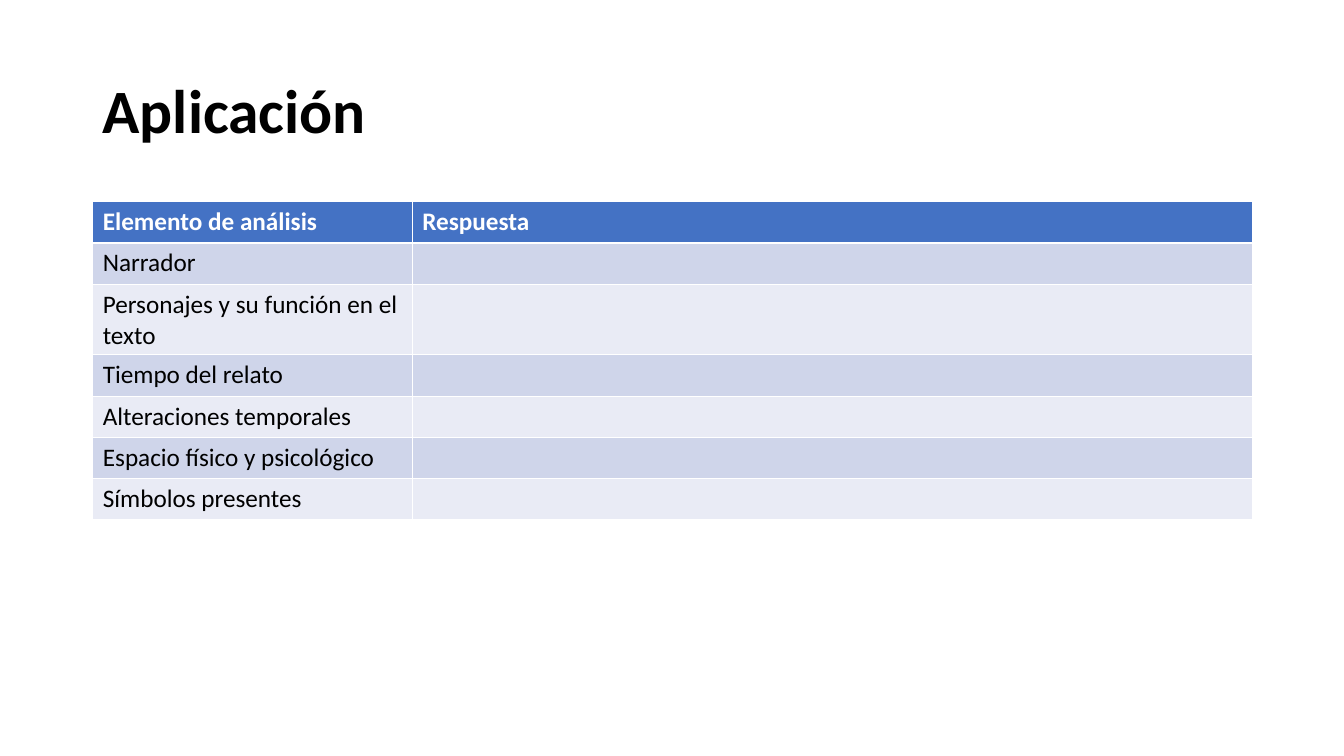
from dataclasses import dataclass

from pptx import Presentation
from pptx.dml.color import RGBColor
from pptx.enum.text import MSO_ANCHOR
from pptx.util import Inches, Pt


@dataclass(frozen=True)
class Theme:
    font: str = "Calibri"
    title_size: int = 44
    table_size: int = 18
    ink: str = "000000"
    header_ink: str = "FFFFFF"
    header_fill: str = "4472C4"
    band_fills: tuple = ("CFD5EA", "E9EBF5")


THEME = Theme()
HEADINGS = ("Elemento de análisis", "Respuesta")
ELEMENTS = (
    "Narrador",
    "Personajes y su función en el texto",
    "Tiempo del relato",
    "Alteraciones temporales",
    "Espacio físico y psicológico",
    "Símbolos presentes",
)
ELEMENT_SHARE = 3.17 / 11.5
ROW_HEIGHT = 0.41


def style_paragraph(paragraph, size, color, bold):
    font = paragraph.font
    font.name = THEME.font
    font.size = Pt(size)
    font.bold = bold
    font.color.rgb = RGBColor.from_string(color)


def add_title(slide, text, left, top, width, height):
    title = slide.shapes.add_textbox(
        Inches(left), Inches(top), Inches(width), Inches(height)
    ).text_frame
    title.word_wrap = True
    title.vertical_anchor = MSO_ANCHOR.MIDDLE
    heading = title.paragraphs[0]
    heading.text = text
    heading.line_spacing = 0.9
    style_paragraph(heading, THEME.title_size, THEME.ink, True)


def add_analysis_table(slide, left, top, width):
    rows = [HEADINGS] + [(element, "") for element in ELEMENTS]
    analysis = slide.shapes.add_table(
        len(rows), len(HEADINGS),
        Inches(left), Inches(top), Inches(width), Inches(ROW_HEIGHT * len(rows)),
    ).table
    element_width = width * ELEMENT_SHARE
    analysis.columns[0].width = Inches(element_width)
    analysis.columns[1].width = Inches(width - element_width)

    for row_index, texts in enumerate(rows):
        is_header = row_index == 0
        fill = THEME.header_fill if is_header else THEME.band_fills[(row_index - 1) % 2]
        ink = THEME.header_ink if is_header else THEME.ink
        for column_index, text in enumerate(texts):
            cell = analysis.cell(row_index, column_index)
            cell.fill.solid()
            cell.fill.fore_color.rgb = RGBColor.from_string(fill)
            cell.text = text
            style_paragraph(
                cell.text_frame.paragraphs[0], THEME.table_size, ink, is_header
            )


def main():
    presentation = Presentation()
    presentation.slide_width = Inches(13.33)
    presentation.slide_height = Inches(7.5)
    slide = presentation.slides.add_slide(presentation.slide_layouts[6])
    add_title(slide, "Aplicación", 0.92, 0.4, 11.5, 1.45)
    add_analysis_table(slide, 0.92, 2, 11.5)
    presentation.save("out.pptx")


if __name__ == "__main__":
    main()
